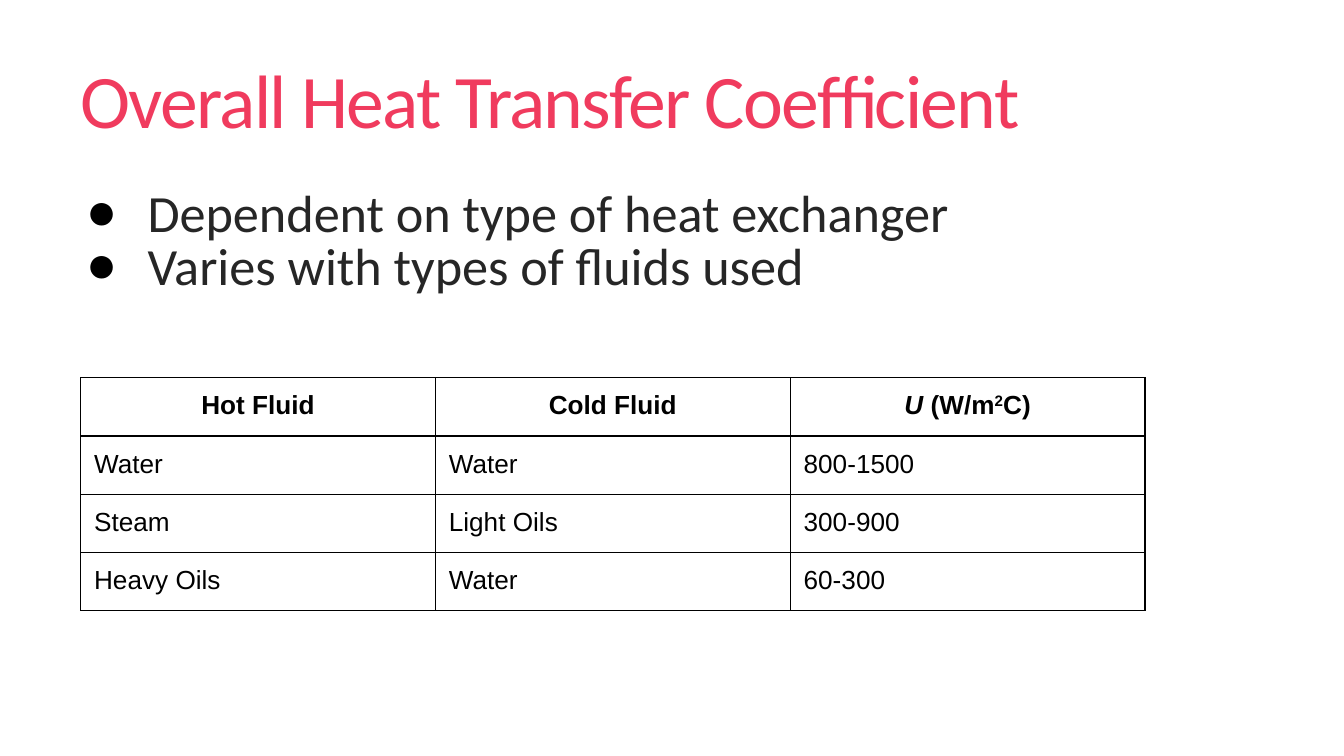
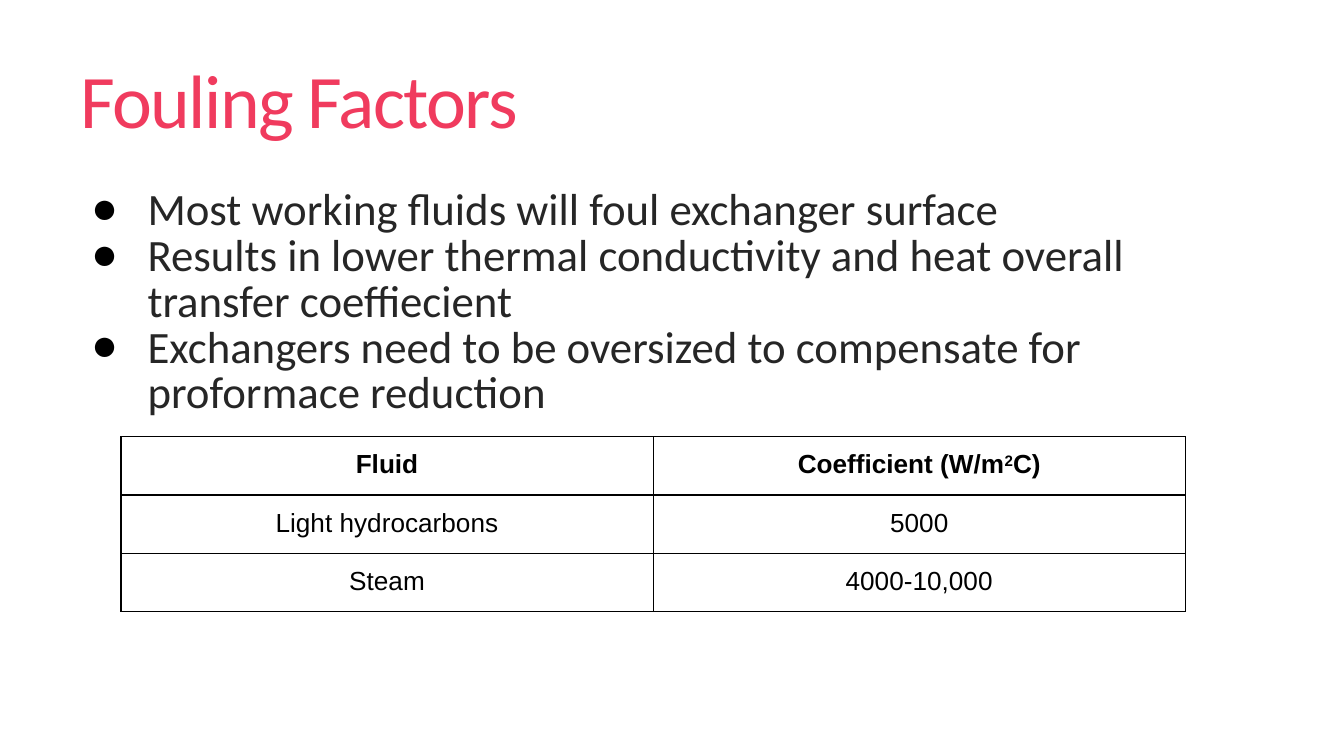
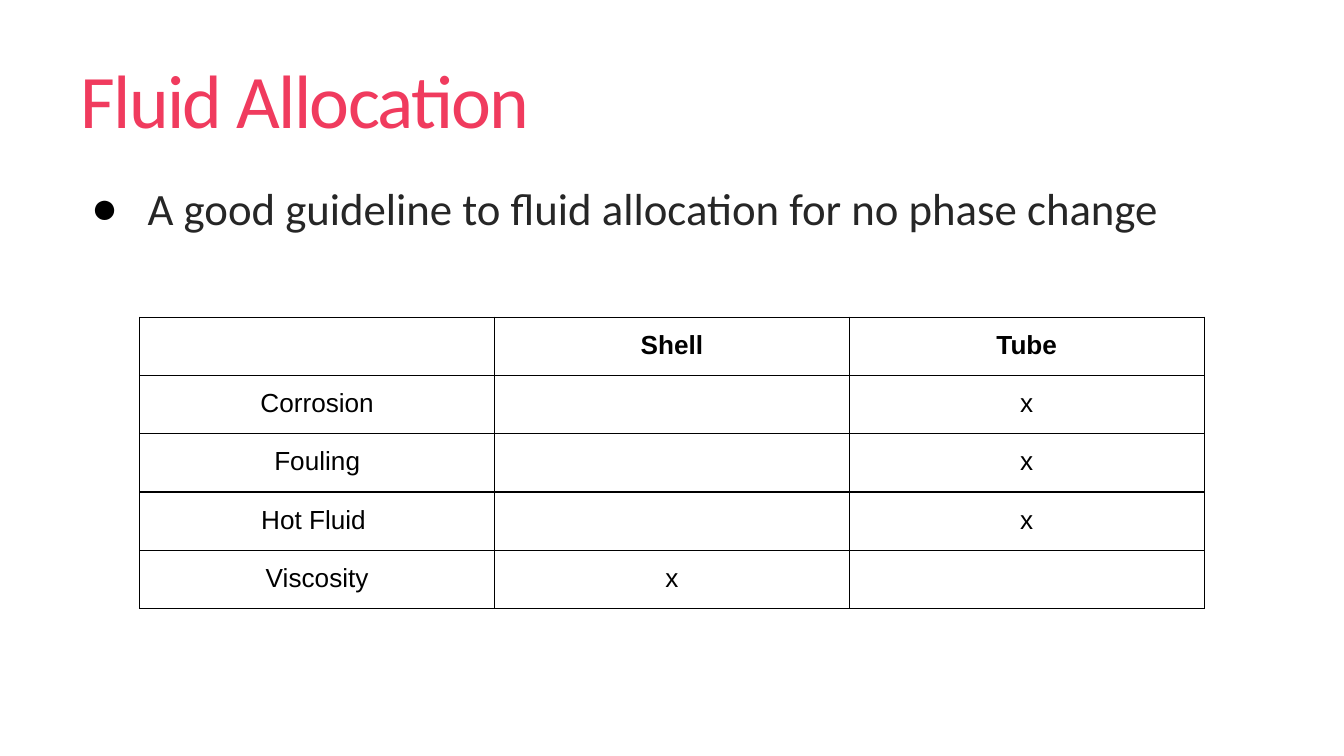
from dataclasses import dataclass

from lxml import etree
from pptx import Presentation
from pptx import util as u
from pptx.dml.color import RGBColor
from pptx.enum import text
from pptx.oxml.ns import qn

# Content: cells are strings, or lists of (words, style) runs
SLIDES = [
    dict(
        title="Overall Heat Transfer Coefficient",
        bullets=["Dependent on type of heat exchanger",
                 "Varies with types of fluids used"],
        bullet_size=28, hang=0.46,
        table_at=(0.6, 2.81), centre_body=False,
        rows=[
            ["Hot Fluid", "Cold Fluid",
             [("U", "italic"), (" (W/m", ""), ("2", "super"), ("C)", "")]],
            ["Water", "Water", "800-1500"],
            ["Steam", "Light Oils", "300-900"],
            ["Heavy Oils", "Water", "60-300"],
        ],
    ),
    dict(
        title="Fouling Factors",
        bullets=["Most working fluids will foul exchanger surface",
                 "Results in lower thermal conductivity and heat overall "
                 "transfer coeffiecient",
                 "Exchangers need to be oversized to compensate for "
                 "proformace reduction"],
        bullet_size=24, hang=0.42,
        table_at=(0.9, 3.25), centre_body=True,
        rows=[
            ["Fluid", [("Coefficient (W/m", ""), ("2", "super"), ("C)", "")]],
            ["Light hydrocarbons", "5000"],
            ["Steam", "4000-10,000"],
        ],
    ),
    dict(
        title="Fluid Allocation",
        bullets=["A good guideline to fluid allocation for no phase change"],
        bullet_size=24, hang=0.42,
        table_at=(1.04, 2.36), centre_body=True,
        rows=[
            ["", "Shell", "Tube"],
            ["Corrosion", "", "x"],
            ["Fouling", "", "x"],
            ["Hot Fluid ", "", "x"],
            ["Viscosity", "x", ""],
        ],
    ),
]


@dataclass(frozen=True)
class Theme:
    title_colour: str = "F03B5E"
    body_colour: str = "262626"
    ink: str = "000000"
    paper: str = "FFFFFF"
    text_font: str = "Calibri"
    table_font: str = "Arial"
    bullet_font: str = "Arial"
    title_size: float = 40.5
    title_tracking: float = -0.9
    table_size: float = 14
    border: float = 0.75
    line_spacing: float = 0.85


T = Theme()

# Layout in inches, on a 16:9 slide
WIDTH = 10
HEIGHT = WIDTH * 9 / 16
MARGIN, INSET = 0.5, 0.1
TITLE_TOP, TITLE_HEIGHT = 0.23, 0.94
BODY_TOP, BODY_HEIGHT = 1.31, 4.07
BULLET_INDENT = 0.5
TABLE_WIDTH, ROW_HEIGHT = 7.92, 0.42


def set_font(p, name, size, colour, bold=False):
    p.font.name, p.font.size, p.font.bold = name, u.Pt(size), bold
    p.font.color.rgb = RGBColor.from_string(colour)


def set_insets(frame):
    frame.margin_left = frame.margin_right = u.Inches(INSET)
    frame.margin_top = frame.margin_bottom = u.Inches(INSET)


def add_text(s, top, height, lines, size, colour, anchor):
    sp = s.shapes.add_textbox(u.Inches(MARGIN), u.Inches(top),
                              u.Inches(WIDTH - 2 * MARGIN), u.Inches(height))
    tf = sp.text_frame
    tf.word_wrap, tf.vertical_anchor = True, anchor
    set_insets(tf)
    tf.text = "\n".join(lines)
    for p in tf.paragraphs:
        set_font(p, T.text_font, size, colour)
        p.line_spacing = T.line_spacing
    return tf


def add_bullet(p, size, hang):
    pPr = p._p.get_or_add_pPr()
    pPr.set("marL", str(u.Inches(BULLET_INDENT)))
    pPr.set("indent", str(-u.Inches(hang)))
    colour = etree.Element(qn("a:buClr"))
    etree.SubElement(colour, qn("a:srgbClr"), val=T.ink)
    parts = (colour,
             etree.Element(qn("a:buSzPts"), val=str(size * 100)),
             etree.Element(qn("a:buFont"), typeface=T.bullet_font),
             etree.Element(qn("a:buChar"), char="●"))
    default_font = pPr.find(qn("a:defRPr"))
    for part in parts:
        default_font.addprevious(part)


def add_borders(cell):
    tcPr = cell._tc.get_or_add_tcPr()
    for side in ("lnL", "lnR", "lnT", "lnB"):
        ln = etree.SubElement(tcPr, qn(f"a:{side}"), w=str(u.Pt(T.border)))
        fill = etree.SubElement(ln, qn("a:solidFill"))
        etree.SubElement(fill, qn("a:srgbClr"), val=T.ink)


def fill_cell(cell, content, header, centred):
    set_insets(cell)
    add_borders(cell)
    cell.fill.background()
    p = cell.text_frame.paragraphs[0]
    p.alignment = text.PP_ALIGN.CENTER if centred else text.PP_ALIGN.LEFT
    if content:
        set_font(p, T.table_font, T.table_size, T.ink, bold=header)
        for words, style in [(content, "")] if isinstance(content, str) else content:
            r = p.add_run()
            r.text = words
            if style == "italic":
                r.font.italic = True
            elif style == "super":
                r._r.get_or_add_rPr().set("baseline", "30000")
    # The paragraph end sets the row's natural height
    end = etree.SubElement(p._p, qn("a:endParaRPr"), sz=str(T.table_size * 100))
    if content:
        etree.SubElement(end, qn("a:latin"), typeface=T.table_font)


def add_grid(s, rows, at, centre_body):
    n_rows, n_cols = len(rows), len(rows[0])
    left, top = at
    table = s.shapes.add_table(n_rows, n_cols, u.Inches(left), u.Inches(top),
                               u.Inches(TABLE_WIDTH),
                               u.Inches(ROW_HEIGHT * n_rows)).table
    table.first_row = table.horz_banding = False
    for i, row in enumerate(rows):
        for j, content in enumerate(row):
            fill_cell(table.cell(i, j), content, i == 0, i == 0 or centre_body)


def add_slide(prs, data):
    s = prs.slides.add_slide(prs.slide_layouts[6])
    s.background.fill.solid()
    s.background.fill.fore_color.rgb = RGBColor.from_string(T.paper)

    # Title
    tf = add_text(s, TITLE_TOP, TITLE_HEIGHT, [data["title"]], T.title_size,
                  T.title_colour, text.MSO_ANCHOR.BOTTOM)
    r = tf.paragraphs[0].runs[0]
    r._r.get_or_add_rPr().set("spc", str(round(T.title_tracking * 100)))

    # Bullets
    size = data["bullet_size"]
    tf = add_text(s, BODY_TOP, BODY_HEIGHT, data["bullets"], size,
                  T.body_colour, text.MSO_ANCHOR.TOP)
    for p in tf.paragraphs:
        add_bullet(p, size, data["hang"])

    # Table
    add_grid(s, data["rows"], data["table_at"], data["centre_body"])


def main():
    prs = Presentation()
    prs.slide_width, prs.slide_height = u.Inches(WIDTH), u.Inches(HEIGHT)
    for data in SLIDES:
        add_slide(prs, data)
    prs.save("out.pptx")


if __name__ == "__main__":
    main()
